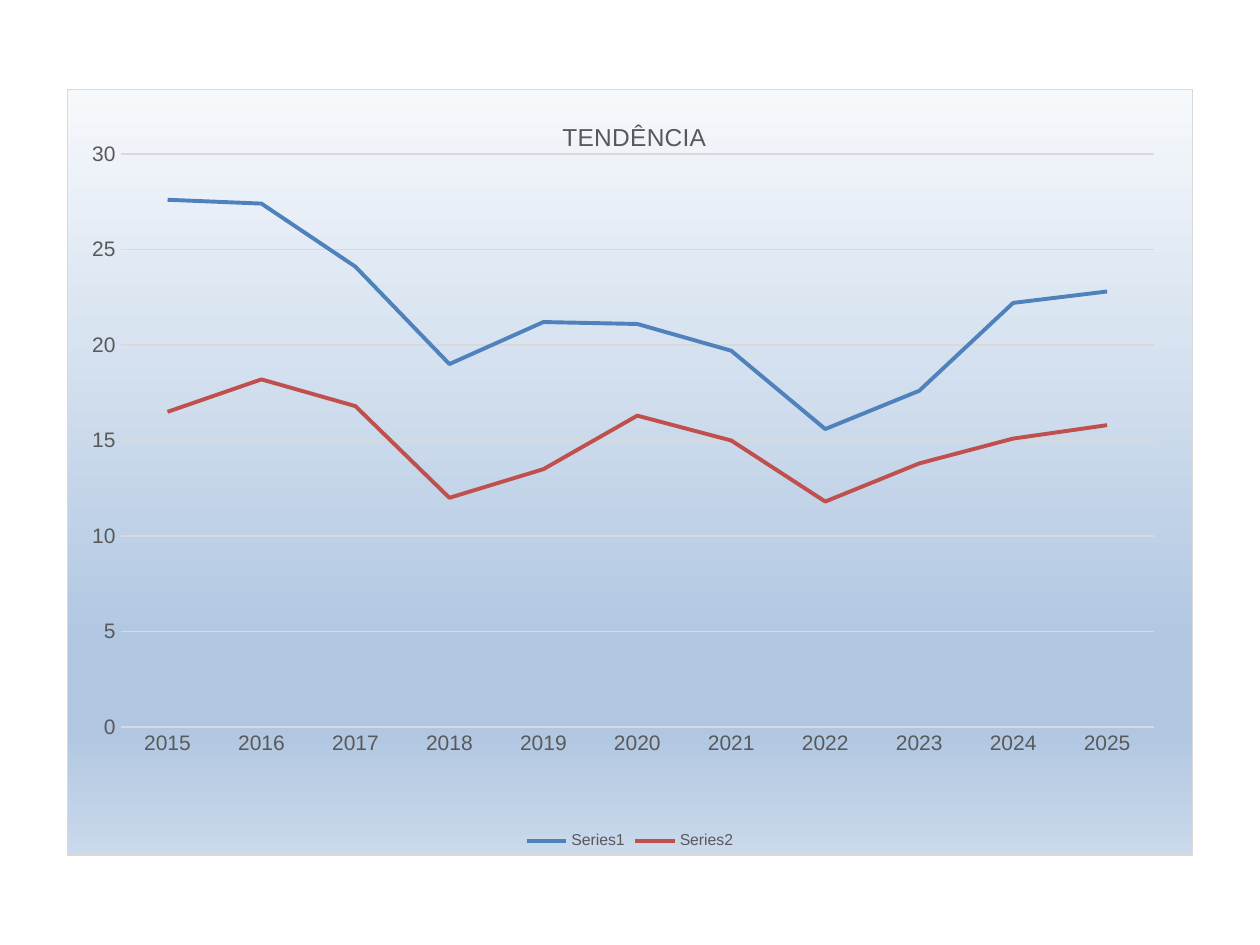
from dataclasses import dataclass

from lxml.etree import fromstring
from pptx import Presentation
from pptx.chart.data import CategoryChartData
from pptx.dml.color import RGBColor
from pptx.enum.chart import XL_CHART_TYPE, XL_LEGEND_POSITION, XL_TICK_MARK
from pptx.oxml.ns import nsdecls, qn
from pptx.util import Pt


@dataclass(frozen=True)
class Theme:
    font: str = "Arial"
    text: str = "595959"
    rule: str = "D9D9D9"
    series: tuple = ("4F81BD", "C0504D")
    gradient: tuple = ((0, "F6F9FC"), (74, "B0C6E1"), (83, "B0C6E1"), (100, "CAD9EB"))
    title_size: float = 14
    axis_size: float = 12
    legend_size: float = 9
    base_size: float = 10
    rule_width: float = 0.75
    series_width: float = 2.25


THEME = Theme()
YEARS = [str(year) for year in range(2015, 2026)]
TREND = {
    "Series1": (27.6, 27.4, 24.1, 19, 21.2, 21.1, 19.7, 15.6, 17.6, 22.2, 22.8),
    "Series2": (16.5, 18.2, 16.8, 12, 13.5, 16.3, 15, 11.8, 13.8, 15.1, 15.8),
}


def style_font(font, size, color=THEME.text):
    font.name = THEME.font
    font.size = Pt(size)
    font.bold = False
    font.color.rgb = RGBColor.from_string(color)


def write_text(tf, text, **fmt):
    r = tf.paragraphs[0].add_run()
    r.text = text
    style_font(r.font, **fmt)


def style_line(line, color, width):
    line.color.rgb = RGBColor.from_string(color)
    line.width = Pt(width)


def set_layout(parent, index, **parts):
    """Place a chart part by fractions of the chart's size."""
    for old in parent.findall(qn("c:layout")):
        parent.remove(old)
    inner = '<c:layoutTarget val="inner"/>' if "w" in parts else ""
    modes = "".join(f'<c:{k}Mode val="edge"/>' for k in ("x", "y"))
    values = "".join(f'<c:{k} val="{v}"/>' for k, v in parts.items())
    parent.insert(index, fromstring(
        f'<c:layout {nsdecls("c")}><c:manualLayout>{inner}{modes}{values}'
        '</c:manualLayout></c:layout>'))


def fill_background(chart_space):
    stops = "".join(
        f'<a:gs pos="{pos * 1000}"><a:srgbClr val="{color}"/></a:gs>'
        for pos, color in THEME.gradient)
    chart_space.find(qn("c:chart")).addnext(fromstring(
        f'<c:spPr {nsdecls("c", "a")}><a:gradFill><a:gsLst>{stops}</a:gsLst>'
        '<a:lin ang="5400000" scaled="0"/></a:gradFill>'
        f'<a:ln w="{Pt(THEME.rule_width)}"><a:solidFill>'
        f'<a:srgbClr val="{THEME.rule}"/></a:solidFill></a:ln></c:spPr>'))
    chart_space.find(qn("c:date1904")).addnext(
        fromstring(f'<c:roundedCorners {nsdecls("c")} val="0"/>'))


def style_axes(chart):
    for axis in (chart.category_axis, chart.value_axis):
        axis.major_tick_mark = axis.minor_tick_mark = XL_TICK_MARK.NONE
        style_font(axis.tick_labels.font, THEME.axis_size)
    style_line(chart.category_axis.format.line, THEME.rule, THEME.rule_width)

    values = chart.value_axis
    values.minimum_scale, values.maximum_scale, values.major_unit = 0, 30, 5
    values.tick_labels.number_format = "0"
    values.tick_labels.number_format_is_linked = False
    values.format.line.fill.background()
    values.has_major_gridlines = True
    style_line(values.major_gridlines.format.line, THEME.rule, THEME.rule_width)


def add_trend_chart(s, left, top, width, height):
    data = CategoryChartData()
    data.categories = YEARS
    for name, values in TREND.items():
        data.add_series(name, values)
    chart = s.shapes.add_chart(
        XL_CHART_TYPE.LINE, left, top, width, height, data).chart
    style_font(chart.font, THEME.base_size, "000000")
    fill_background(chart.element)

    # Title
    chart.has_title = True
    write_text(chart.chart_title.text_frame, "TENDÊNCIA", size=THEME.title_size)
    chart.chart_title.include_in_layout = False
    frame = chart.element.find(qn("c:chart"))
    set_layout(frame.find(qn("c:title")), 1, x=0.436, y=0.035)

    # Plot, axes and lines
    set_layout(frame.find(qn("c:plotArea")), 0, x=0.047, y=0.084, w=0.919, h=0.749)
    style_axes(chart)
    chart.plots[0].vary_by_categories = False
    for series, color in zip(chart.plots[0].series, THEME.series):
        series.smooth = False
        style_line(series.format.line, color, THEME.series_width)

    # Legend
    chart.has_legend = True
    chart.legend.position = XL_LEGEND_POSITION.BOTTOM
    chart.legend.include_in_layout = False
    style_font(chart.legend.font, THEME.legend_size)


def main():
    prs = Presentation()
    prs.slide_width, prs.slide_height = Pt(720), Pt(540)
    s = prs.slides.add_slide(prs.slide_layouts[6])
    add_trend_chart(s, Pt(38.3), Pt(50.9), Pt(643.5), Pt(438))
    prs.save("out.pptx")


if __name__ == "__main__":
    main()
